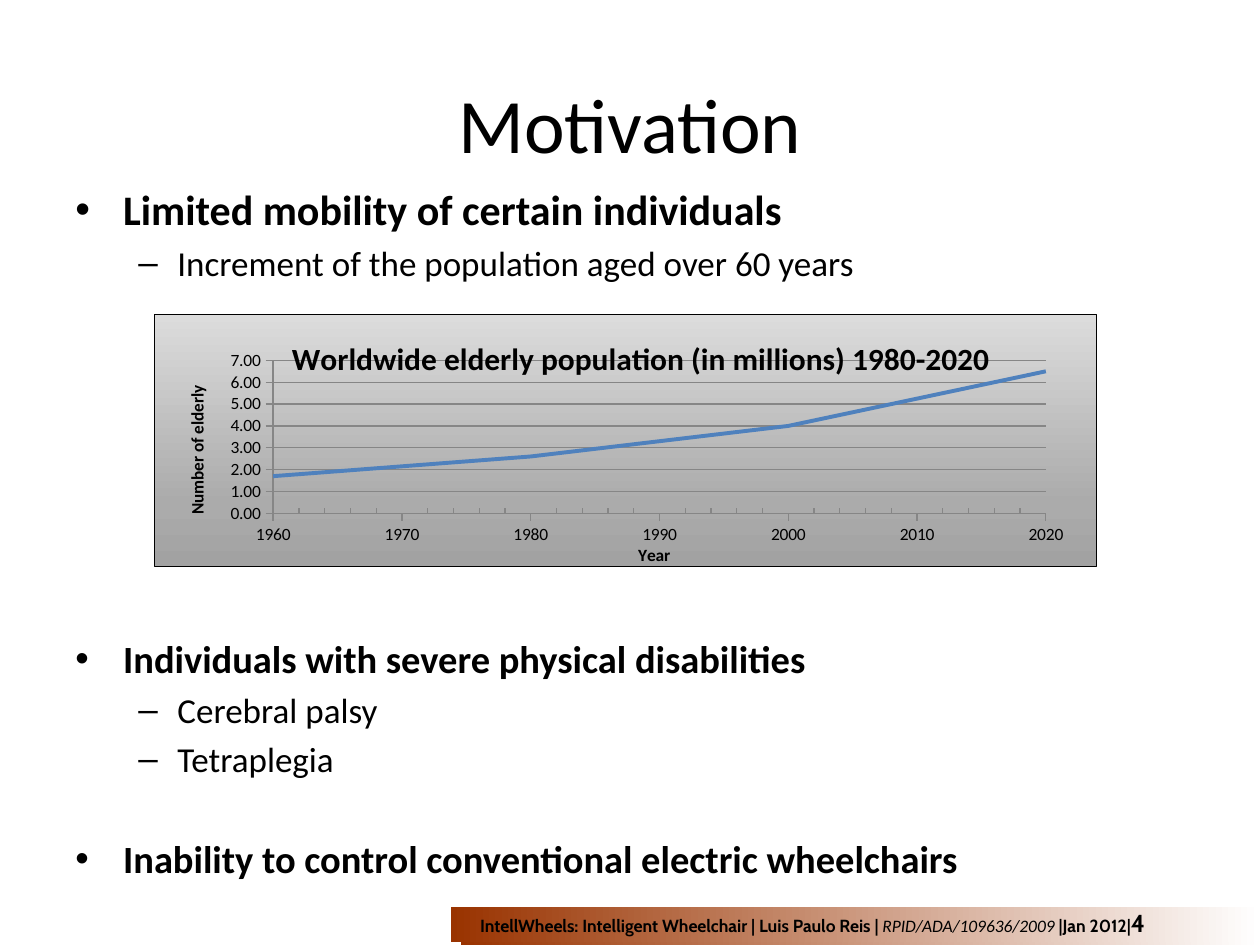
from dataclasses import dataclass

from lxml import etree
from pptx import Presentation
from pptx.chart.data import XyChartData
from pptx.dml.color import RGBColor
from pptx.enum.chart import XL_CHART_TYPE, XL_TICK_MARK
from pptx.enum.shapes import MSO_SHAPE
from pptx.enum.text import MSO_ANCHOR, PP_ALIGN
from pptx.oxml import parse_xml
from pptx.oxml.ns import nsdecls, qn
from pptx.util import Inches, Pt


@dataclass(frozen=True)
class Theme:
    font: str = "Calibri"
    footer_font: str = "Cabin"
    text: RGBColor = RGBColor(0, 0, 0)
    footer_start: RGBColor = RGBColor(0x99, 0x33, 0x00)
    footer_end: RGBColor = RGBColor(0xFF, 0xFF, 0xFF)
    curve: RGBColor = RGBColor(0x4F, 0x81, 0xBD)
    grid: RGBColor = RGBColor(0x86, 0x86, 0x86)
    chart_fill: tuple = ((0, "A2A2A2"), (25, "ABABAB"), (100, "DCDCDC"))
    title_size: int = 44
    lead_size: int = 24
    point_size: int = 22
    detail_size: int = 20
    chart_title_size: int = 18
    chart_size: int = 10
    footer_size: int = 10
    number_size: int = 14


THEME = Theme()

# Text, level, size, space before in points
POINTS = (
    ("Limited mobility of certain individuals", 0, THEME.lead_size, 0),
    ("Increment of the population aged over 60 years", 1, THEME.detail_size, 4),
    ("Individuals with severe physical disabilities", 0, THEME.point_size, 201),
    ("Cerebral palsy", 1, THEME.detail_size, 4),
    ("Tetraplegia", 1, THEME.detail_size, 4),
    ("Inability to control conventional electric wheelchairs", 0, THEME.point_size, 32),
)
# Bullet, left margin and hanging indent of each level
LEVELS = (("•", 0.38, 0.38), ("–", 0.81, 0.31))

ELDERLY = {1960: 170, 1980: 260, 2000: 400, 2020: 650}


def style(font, size, bold=False, italic=False, name=THEME.font):
    font.name, font.size = name, Pt(size)
    font.bold, font.italic = bold, italic
    font.color.rgb = THEME.text


def add_title(slide, text):
    frame = slide.shapes.add_textbox(
        Inches(0.5), Inches(0.7), Inches(9), Inches(0.55)).text_frame
    frame.word_wrap = True
    frame.vertical_anchor = MSO_ANCHOR.MIDDLE
    heading = frame.paragraphs[0]
    heading.text = text
    heading.alignment = PP_ALIGN.CENTER
    style(heading.font, THEME.title_size)


def add_points(slide):
    frame = slide.shapes.add_textbox(
        Inches(0.5), Inches(1.41), Inches(9), Inches(5.55)).text_frame
    frame.word_wrap = True
    for index, (text, level, size, before) in enumerate(POINTS):
        point = frame.add_paragraph() if index else frame.paragraphs[0]
        point.text = text
        point.level = level
        if before:
            point.space_before = Pt(before)
        bullet, margin, hanging = LEVELS[level]
        properties = point._p.get_or_add_pPr()
        properties.set("marL", str(Inches(margin)))
        properties.set("indent", str(-Inches(hanging)))
        etree.SubElement(properties, qn("a:buFont")).set("typeface", "Arial")
        etree.SubElement(properties, qn("a:buChar")).set("char", bullet)
        style(point.font, size, bold=level == 0)


def place(element, position, **values):
    """Give a chart part a manual layout in fractions of the chart."""
    layout = element.find(qn("c:layout"))
    if layout is None:
        layout = etree.Element(qn("c:layout"))
        element.insert(position, layout)
    manual = etree.SubElement(layout, qn("c:manualLayout"))
    settings = {"xMode": "edge", "yMode": "edge", **values}
    if "w" in values:
        settings = {"layoutTarget": "inner", **settings}
    for key, value in settings.items():
        etree.SubElement(manual, qn(f"c:{key}")).set("val", str(value))


def set_chart_title(title, text, size, x, y):
    title.text_frame.text = text
    style(title.text_frame.paragraphs[0].font, size, bold=True)
    place(title._element, 1, x=x, y=y)


def fill_chart(chart):
    stops = "".join(
        f'<a:gs pos="{position * 1000}"><a:srgbClr val="{color}"/></a:gs>'
        for position, color in THEME.chart_fill)
    frame = parse_xml(
        f'<c:spPr {nsdecls("c", "a")}><a:gradFill><a:gsLst>{stops}</a:gsLst>'
        f'<a:lin ang="16200000" scaled="0"/></a:gradFill><a:ln w="{Pt(0.75)}">'
        f'<a:solidFill><a:srgbClr val="{THEME.text}"/></a:solidFill></a:ln></c:spPr>')
    chart._chartSpace.find(qn("c:chart")).addnext(frame)


def add_elderly_chart(slide):
    data = XyChartData()
    elderly = data.add_series("Series 1")
    for year, count in ELDERLY.items():
        elderly.add_data_point(year, count)
    chart = slide.shapes.add_chart(
        XL_CHART_TYPE.XY_SCATTER_SMOOTH_NO_MARKERS,
        Inches(1.22), Inches(2.49), Inches(7.49), Inches(2.04), data).chart
    chart.has_legend = False
    style(chart.font, THEME.chart_size)
    fill_chart(chart)
    plot_area = chart._chartSpace.find(f'{qn("c:chart")}/{qn("c:plotArea")}')
    place(plot_area, 0, x=0.126, y=0.183, w=0.82, h=0.607)

    # Curve
    curve = chart.plots[0].series[0]
    curve.smooth = True
    curve.format.line.color.rgb = THEME.curve
    curve.format.line.width = Pt(2.25)

    # Axes
    years, counts = chart.category_axis, chart.value_axis
    for axis, low, high, step, number_format in (
            (years, 1960, 2020, 10, "0"), (counts, 0, 700, 100, r"0\.00")):
        axis.minimum_scale, axis.maximum_scale = low, high
        axis.major_unit = step
        axis.major_tick_mark = XL_TICK_MARK.OUTSIDE
        axis.minor_tick_mark = XL_TICK_MARK.NONE
        axis.tick_labels.number_format = number_format
        axis.tick_labels.number_format_is_linked = False
        axis.format.line.color.rgb = THEME.grid
    years.has_major_gridlines = False
    years.minor_unit = 2
    years.minor_tick_mark = XL_TICK_MARK.INSIDE
    counts.has_major_gridlines = True
    counts.major_gridlines.format.line.color.rgb = THEME.grid

    # Titles
    set_chart_title(chart.chart_title,
                    "Worldwide elderly population (in millions) 1980-2020",
                    THEME.chart_title_size, 0.14, 0.07)
    set_chart_title(years.axis_title, "Year", THEME.chart_size, 0.51, 0.9)
    set_chart_title(counts.axis_title, "Number of elderly",
                    THEME.chart_size, 0.03, 0.28)
    direction = counts.axis_title.text_frame._txBody.find(qn("a:bodyPr"))
    direction.set("rot", "-5400000")
    direction.set("vert", "horz")


def add_footer_band(slide, left, top, width, height):
    band = slide.shapes.add_shape(
        MSO_SHAPE.RECTANGLE, Inches(left), Inches(top), Inches(width), Inches(height))
    band.shadow.inherit = False
    band.line.fill.background()
    band.fill.gradient()
    band.fill.gradient_angle = 0
    start, end = band.fill.gradient_stops
    start.color.rgb, start.position = THEME.footer_start, 0
    end.color.rgb, end.position = THEME.footer_end, 1
    return band


def add_footer(slide):
    add_footer_band(slide, 3.66, 7.24, 6.34, 0.26)
    frame = add_footer_band(slide, 3.58, 7.2, 6.42, 0.28).text_frame
    frame.margin_left, frame.margin_right = Inches(0.23), 0
    frame.margin_top, frame.margin_bottom = Inches(0.07), Inches(0.05)
    frame.vertical_anchor = MSO_ANCHOR.MIDDLE
    frame.word_wrap = True
    credit = frame.paragraphs[0]
    credit.alignment = PP_ALIGN.LEFT
    credit.line_spacing = 0.7
    for text, size, italic, name in (
            ("IntellWheels: Intelligent Wheelchair | Luis Paulo Reis | ",
             THEME.footer_size, False, THEME.footer_font),
            ("RPID/ADA/109636/2009", THEME.footer_size, True, THEME.font),
            (" |Jan 2012|", THEME.footer_size, False, THEME.footer_font),
            ("4", THEME.number_size, False, THEME.footer_font)):
        part = credit.add_run()
        part.text = text
        style(part.font, size, bold=not italic, italic=italic, name=name)


def main():
    deck = Presentation()
    deck.slide_width, deck.slide_height = Inches(10), Inches(7.5)
    slide = deck.slides.add_slide(deck.slide_layouts[6])
    add_footer(slide)
    add_points(slide)
    add_elderly_chart(slide)
    add_title(slide, "Motivation")
    deck.save("out.pptx")


if __name__ == "__main__":
    main()
